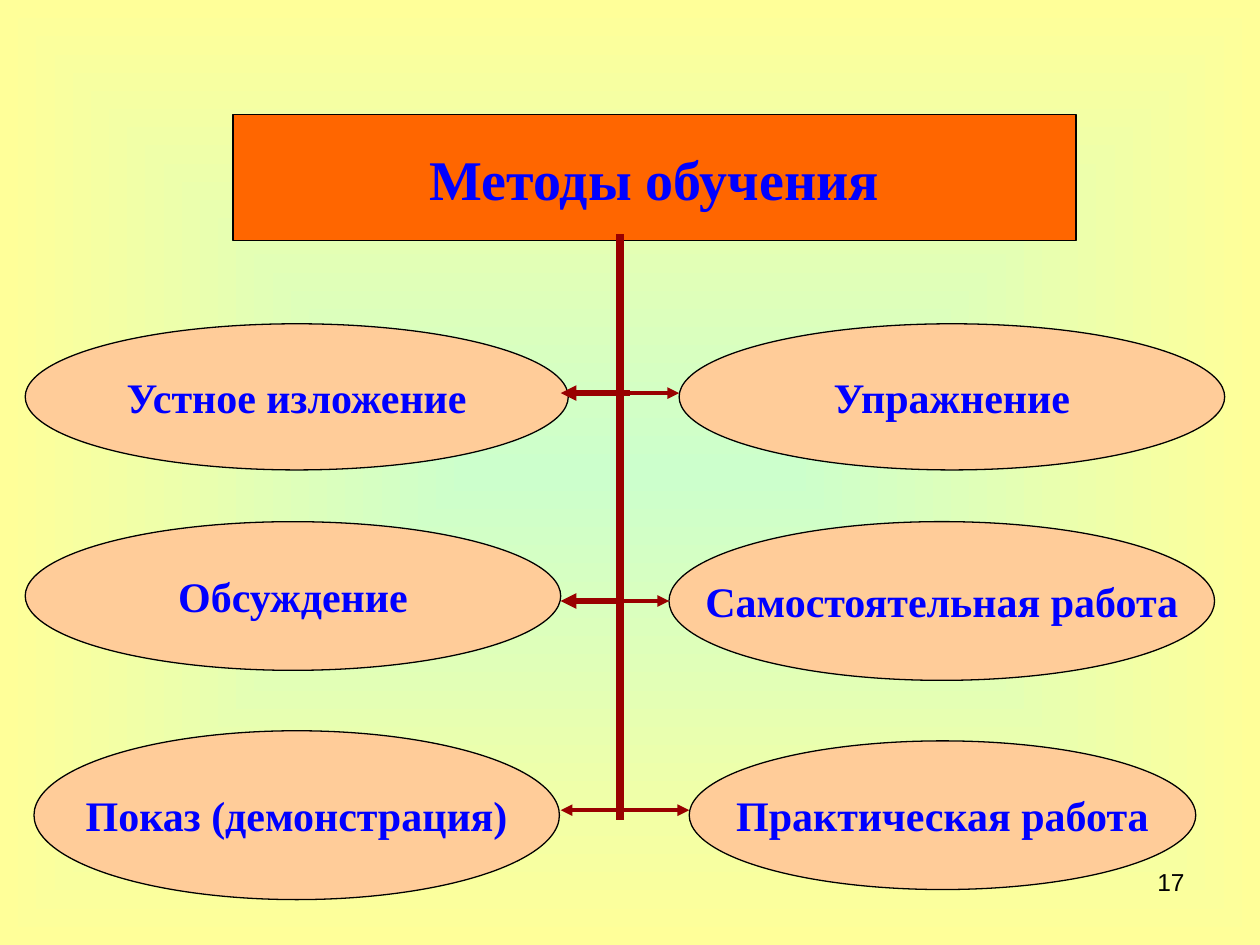
import pptx
import pptx.util
import pptx.dml.color
import pptx.enum.shapes
import pptx.enum.text
import pptx.oxml.ns
import pptx.oxml.xmlchemy
from pptx.util import Inches

COLORS = {
    "center": "CCFFCC", "edge": "FFFF99", "title": "FF6600", "method": "FFCC99",
    "outline": "000000", "text": "0000FF", "number": "000000", "arrow": "990000",
}
TITLE = ("Методы обучения", (1.85, 0.91, 6.69, 1))
METHODS = [
    ("Устное изложение", (0.2, 2.57, 4.31, 1.16)),
    ("Упражнение", (5.39, 2.57, 4.33, 1.16)),
    ("Обсуждение", (0.2, 4.14, 4.25, 1.18)),
    ("Показ (демонстрация)", (0.27, 5.8, 4.17, 1.34)),
    ("Практическая работа", (5.47, 5.88, 4.02, 1.18)),
    ("Самостоятельная работа", (5.31, 4.14, 4.33, 1.26)),
]
PAGE_NUMBER = ("17", (7.17, 6.83, 2.33, 0.52))
TRUNK_X, TRUNK_TOP, TRUNK_BOTTOM = 4.92, 1.86, 6.51
LEFT_TIP = 4.45
# height, then start x and line width to the left; start x and tip x to the right
BRANCHES = [
    (3.12, 5, 3, 5, 5.39),
    (4.77, TRUNK_X, 3, TRUNK_X, 5.31),
    (6.43, TRUNK_X, 2.25, 4.84, 5.47),
]
RIGHT_WIDTH = 2.25

SHAPES = pptx.enum.shapes.MSO_SHAPE
ALIGN = pptx.enum.text.PP_ALIGN


def color(name):
    return pptx.dml.color.RGBColor.from_string(COLORS[name])


def add_element(parent, tag, **attributes):
    element = pptx.oxml.xmlchemy.OxmlElement(tag)
    for name, value in attributes.items():
        element.set(name, value)
    parent.append(element)
    return element


def write(box, text, size, font="Times New Roman", ink="text", bold=True,
          align=ALIGN.CENTER, anchor=pptx.enum.text.MSO_ANCHOR.MIDDLE, wrap=False):
    frame = box.text_frame
    frame.word_wrap = wrap
    frame.vertical_anchor = anchor
    para = frame.paragraphs[0]
    para.alignment = align
    span = para.add_run()
    span.text = text
    span.font.name = font
    span.font.size = pptx.util.Pt(size)
    span.font.bold = bold
    span.font.color.rgb = color(ink)


def add_box(page, kind, place, fill, text, size):
    box = page.shapes.add_shape(kind, *map(Inches, place))
    box.shadow.inherit = False
    box.fill.solid()
    box.fill.fore_color.rgb = color(fill)
    box.line.color.rgb = color("outline")
    box.line.width = pptx.util.Pt(0.75)
    write(box, text, size)


def add_line(page, start, end, width, arrow=True):
    line = page.shapes.add_connector(
        pptx.enum.shapes.MSO_CONNECTOR.STRAIGHT, *map(Inches, start + end))
    line.line.color.rgb = color("arrow")
    line.line.width = pptx.util.Pt(width)
    properties = line._element.spPr
    if arrow:
        outline = properties.find(pptx.oxml.ns.qn("a:ln"))
        add_element(outline, "a:tailEnd", type="triangle")
    add_element(properties, "a:effectLst")


def paint_background(page):
    """Fill the page with a gradient that spreads from its centre."""
    fill = page.background.fill
    fill.gradient()
    for stop, name, position in zip(fill.gradient_stops, ("center", "edge"), (0, 1)):
        stop.color.rgb = color(name)
        stop.position = position
    gradient = page._element.find(".//" + pptx.oxml.ns.qn("a:gradFill"))
    gradient.remove(gradient.find(pptx.oxml.ns.qn("a:lin")))
    spread = add_element(gradient, "a:path", path="shape")
    add_element(spread, "a:fillToRect", **dict.fromkeys("ltrb", "50000"))


def main():
    deck = pptx.Presentation()
    deck.slide_width, deck.slide_height = Inches(10), Inches(7.5)
    page = deck.slides.add_slide(deck.slide_layouts[6])
    paint_background(page)

    text, place = PAGE_NUMBER
    number = page.shapes.add_textbox(*map(Inches, place))
    write(number, text, 14, font="Arial", ink="number", bold=False,
          align=ALIGN.RIGHT, anchor=pptx.enum.text.MSO_ANCHOR.TOP, wrap=True)

    text, place = TITLE
    add_box(page, SHAPES.RECTANGLE, place, "title", text, 32)
    for text, place in METHODS:
        add_box(page, SHAPES.OVAL, place, "method", text, 24)

    add_line(page, (TRUNK_X, TRUNK_TOP), (TRUNK_X, TRUNK_BOTTOM), 4.5, arrow=False)
    for y, left_start, left_width, right_start, right_tip in BRANCHES:
        add_line(page, (left_start, y), (LEFT_TIP, y), left_width)
        add_line(page, (right_start, y), (right_tip, y), RIGHT_WIDTH)

    deck.save("out.pptx")


if __name__ == "__main__":
    main()
